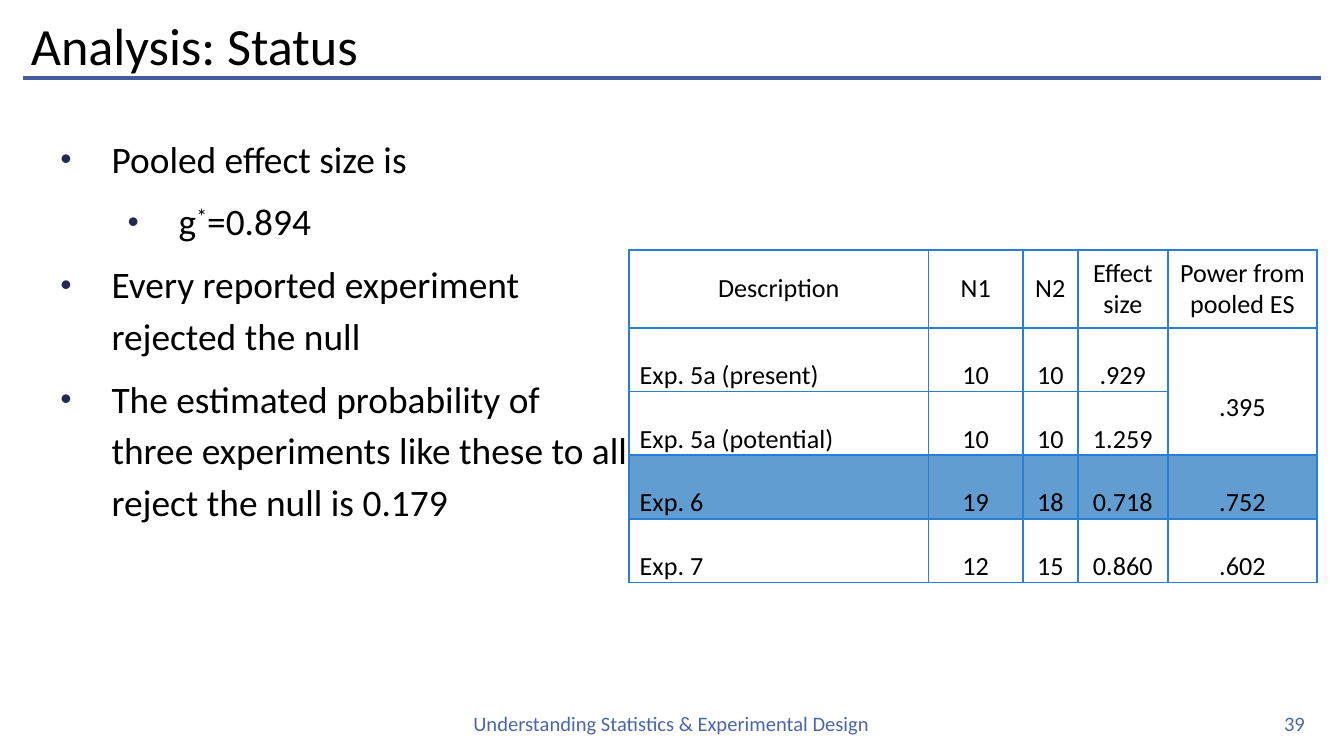
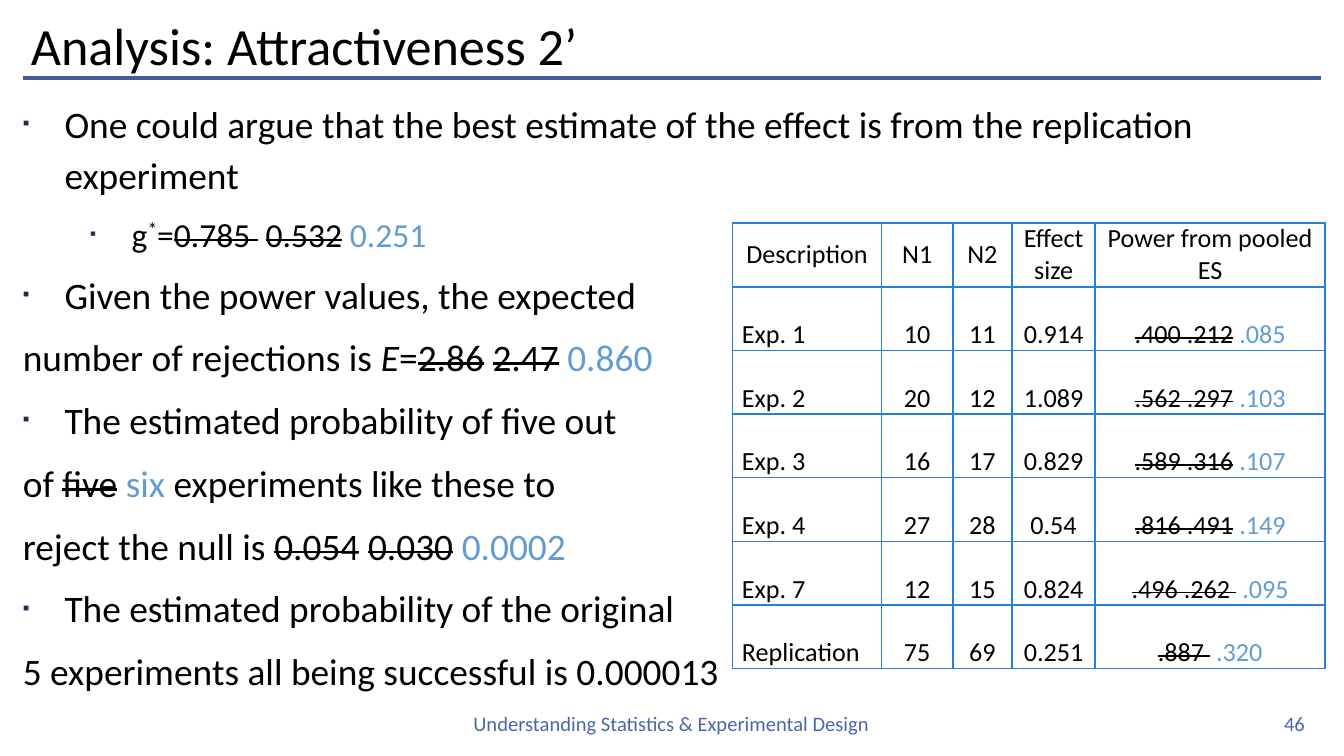
from dataclasses import dataclass
from typing import NamedTuple, Optional, Sequence, Union

from lxml import etree
from pptx import Presentation
from pptx import util as u
from pptx.dml.color import RGBColor
from pptx.enum import shapes, text
from pptx.oxml import ns

LEFT, CENTER, RIGHT = text.PP_ALIGN.LEFT, text.PP_ALIGN.CENTER, text.PP_ALIGN.RIGHT
TOP, MIDDLE, BOTTOM = (text.MSO_ANCHOR.TOP, text.MSO_ANCHOR.MIDDLE,
                       text.MSO_ANCHOR.BOTTOM)
WIDTH = u.Inches(10)
HEIGHT = WIDTH * 9 // 16


@dataclass(frozen=True)
class Theme:
    font: str = "Calibri"
    ink: str = "000000"
    paper: str = "FFFFFF"
    footer: str = "4A66AC"
    rule: str = "435C9B"
    grid: str = "297FD5"
    accent: str = "629DD1"
    bullet: str = "242852"
    title_size: int = 28
    body_size: int = 20
    sub_size: int = 18
    table_size: int = 14
    footer_size: int = 11
    rule_width: float = 2.25
    grid_width: float = 1
    body_spacing: float = 1.15
    row_spacing: float = 2.0
    space_before: float = 0.3


THEME = Theme()


class Box(NamedTuple):
    """A frame in percent of the slide's width and height."""
    left: float
    top: float
    width: float
    height: float

    def emu(self) -> tuple[int, int, int, int]:
        return (across(self.left), down(self.top),
                across(self.width), down(self.height))


class Run(NamedTuple):
    text: str
    color: str = THEME.ink
    strike: bool = False
    italic: bool = False
    raised: bool = False


Content = Union[str, Sequence[Union[str, Run]]]


class Item(NamedTuple):
    content: Content
    level: int = 0
    bulleted: bool = True
    size: int = THEME.body_size


@dataclass(frozen=True)
class BulletList:
    box: Box
    mark: str
    indent: float
    items: Sequence[Item]


@dataclass(frozen=True)
class Grid:
    """Table; None in a row continues the cell above it."""
    box: Box
    columns: Sequence[float]
    header_height: float
    row_height: float
    margin: float
    rows: Sequence[Sequence[Optional[Content]]]
    shaded_row: Optional[int] = None


@dataclass(frozen=True)
class Page:
    title: str
    number: int
    bullets: BulletList
    grid: Grid


TITLE_BOX = Box(1.3, 0.53, 90.5, 10.49)
FOOTER_BOX = Box(24.4, 92.98, 51.1, 5.33)
NUMBER_BOX = Box(87.5, 92.98, 10.3, 5.33)
RULE_LEFT, RULE_RIGHT, RULE_TOP = 1.7, 98.3, 10.31
FOOTER_MARGINS = (0.7, 0.7)
BODY_MARGINS = (1, 0.9)
LEVEL_STEP = 5
FOOTER = "Understanding Statistics & Experimental Design"
HEADER = ("Description", "N1", "N2", "Effect size", "Power from pooled ES")


def across(percent: float) -> int:
    return round(WIDTH * percent / 100)


def down(percent: float) -> int:
    return round(HEIGHT * percent / 100)


def rgb(color: str) -> RGBColor:
    return RGBColor.from_string(color)


def struck(words: str) -> Run:
    return Run(words, strike=True)


def fresh(words: str) -> Run:
    return Run(words, color=THEME.accent)


def revised(old: str, new: str) -> list[Union[str, Run]]:
    return [struck(old), " ", fresh(new)]


def write(p, content: Content, *, size: float, color: str = THEME.ink,
          align=LEFT, spacing: float = 1.0, before: float = 0) -> None:
    """Fill a paragraph; plain strings take the paragraph's colour."""
    p.alignment, p.line_spacing, p.space_before = align, spacing, u.Pt(before)
    for part in [content] if isinstance(content, str) else content:
        run = Run(part, color) if isinstance(part, str) else part
        r = p.add_run()
        r.text = run.text
        font = r.font
        font.name, font.size = THEME.font, u.Pt(size)
        font.color.rgb = rgb(run.color)
        if run.italic:
            font.italic = True
        if run.strike:
            r._r.get_or_add_rPr().set("strike", "sngStrike")
        if run.raised:
            r._r.get_or_add_rPr().set("baseline", "30000")


def frame(sp, margins: tuple[float, float], anchor):
    tf = sp.text_frame
    tf.word_wrap, tf.auto_size = True, text.MSO_AUTO_SIZE.NONE
    tf.vertical_anchor = anchor
    tf.margin_left = tf.margin_right = across(margins[0])
    tf.margin_top = tf.margin_bottom = down(margins[1])
    return tf


def place(sp, box: Box) -> None:
    sp.left, sp.top, sp.width, sp.height = box.emu()


def sub(parent, tag: str, **attributes: str):
    return etree.SubElement(parent, ns.qn(tag), attributes)


def set_bullet(p, item: Item, mark: str, indent: float) -> None:
    p.level = item.level
    pPr = p._p.get_or_add_pPr()
    hang = across(indent) if item.bulleted else 0
    pPr.set("marL", str(hang + across(LEVEL_STEP * item.level)))
    pPr.set("indent", str(-hang))
    if not item.bulleted:
        sub(pPr, "a:buNone")
        return
    sub(sub(pPr, "a:buClr"), "a:srgbClr", val=THEME.bullet)
    sub(pPr, "a:buSzPct", val="50000")
    sub(pPr, "a:buFont", typeface=THEME.font)
    sub(pPr, "a:buChar", char=mark)


def add_bullets(sp, bullets: BulletList) -> None:
    place(sp, bullets.box)
    tf = frame(sp, BODY_MARGINS, TOP)
    for i, item in enumerate(bullets.items):
        p = tf.add_paragraph() if i else tf.paragraphs[0]
        set_bullet(p, item, bullets.mark, bullets.indent)
        write(p, item.content, size=item.size, spacing=THEME.body_spacing,
              before=THEME.space_before * item.size if i else 0)


def set_borders(cell) -> None:
    tcPr = cell._tc.get_or_add_tcPr()
    for i, side in enumerate(("lnL", "lnR", "lnT", "lnB")):
        ln = sub(tcPr, f"a:{side}", w=str(u.Pt(THEME.grid_width)))
        sub(sub(ln, "a:solidFill"), "a:srgbClr", val=THEME.grid)
        tcPr.insert(i, ln)


def add_grid(slide, grid: Grid) -> None:
    rows = [HEADER, *grid.rows]
    sp = slide.shapes.add_table(len(rows), len(HEADER), *grid.box.emu())
    table = sp.table
    table.first_row = table.horz_banding = False
    for column, width in zip(table.columns, grid.columns):
        column.width = across(width)
    for i, row in enumerate(rows):
        table.rows[i].height = down(grid.row_height if i else grid.header_height)
        for j, content in enumerate(row):
            cell = table.cell(i, j)
            if i == grid.shaded_row:
                cell.fill.solid()
                cell.fill.fore_color.rgb = rgb(THEME.accent)
            else:
                cell.fill.background()
            set_borders(cell)
            cell.margin_left = cell.margin_right = across(grid.margin)
            cell.margin_top = cell.margin_bottom = 0
            if content is None:
                above = table.cell(i - 1, j)
                above.merge(cell)
                above.vertical_anchor = MIDDLE
                continue
            cell.vertical_anchor = MIDDLE if i == 0 else BOTTOM if j else TOP
            write(cell.text_frame.paragraphs[0], content, size=THEME.table_size,
                  align=CENTER if i == 0 or j else LEFT,
                  spacing=THEME.row_spacing if i else 1.0)
    sp.height = down(grid.box.height)


def add_furniture(slide, number: int) -> None:
    """Draw the page number, the footer and the rule under the title."""
    badge = slide.shapes.add_shape(shapes.MSO_SHAPE.RECTANGLE, *NUMBER_BOX.emu())
    badge.shadow.inherit = False
    badge.fill.solid()
    badge.fill.fore_color.rgb = rgb(THEME.paper)
    badge.line.fill.background()
    footer = slide.shapes.add_textbox(*FOOTER_BOX.emu())
    for sp, words, align in ((badge, str(number), RIGHT), (footer, FOOTER, CENTER)):
        write(frame(sp, FOOTER_MARGINS, MIDDLE).paragraphs[0], words,
              size=THEME.footer_size, color=THEME.footer, align=align)
    rule = slide.shapes.add_connector(
        shapes.MSO_CONNECTOR.STRAIGHT, across(RULE_LEFT), down(RULE_TOP),
        across(RULE_RIGHT), down(RULE_TOP))
    rule.line.color.rgb = rgb(THEME.rule)
    rule.line.width = u.Pt(THEME.rule_width)
    sub(rule._element.spPr, "a:effectLst")


def add_page(prs, page: Page) -> None:
    slide = prs.slides.add_slide(prs.slide_layouts[1])
    title, body = slide.placeholders
    place(title, TITLE_BOX)
    write(frame(title, BODY_MARGINS, BOTTOM).paragraphs[0], page.title,
          size=THEME.title_size)
    add_bullets(body, page.bullets)
    add_furniture(slide, page.number)
    add_grid(slide, page.grid)


STAR = Run("*", raised=True)
STATUS = Page(
    "Analysis: Status", 39,
    BulletList(Box(3.5, 16.18, 44.2, 61.51), "●", 3.8, [
        Item("Pooled effect size is"),
        Item(["g", STAR, "=0.894"], level=1),
        Item("Every reported experiment rejected the null"),
        Item("The estimated probability of three experiments like these to all "
             "reject the null is 0.179")]),
    Grid(Box(46.8, 33.07, 51.1, 43.56), (22.3, 7, 4.1, 6.7, 11.1), 10.31, 8.36, 0.8, [
        ("Exp. 5a (present)", "10", "10", ".929", ".395"),
        ("Exp. 5a (potential)", "10", "10", "1.259", None),
        ("Exp. 6", "19", "18", "0.718", ".752"),
        ("Exp. 7", "12", "15", "0.860", ".602")], shaded_row=3))
ATTRACTIVENESS = Page(
    "Analysis: Attractiveness 2’", 46,
    BulletList(Box(0.7, 11.56, 89.4, 80.89), "▪", 3.1, [
        Item("One could argue that the best estimate of the effect is from the "
             "replication experiment"),
        Item(["g", STAR, "=", struck("0.785 "), " ", *revised("0.532", "0.251")],
             level=1, size=THEME.sub_size),
        Item("Given the power values, the expected"),
        Item(["number of rejections is ", Run("E", italic=True), "=",
              struck("2.86"), " ", *revised("2.47", "0.860")], bulleted=False),
        Item("The estimated probability of five out"),
        Item(["of ", *revised("five", "six"), " experiments like these to"],
             bulleted=False),
        Item(["reject the null is ", struck("0.054"), " ",
              *revised("0.030", "0.0002")], bulleted=False),
        Item("The estimated probability of the original"),
        Item("5 experiments all being successful is 0.000013", bulleted=False)]),
    Grid(Box(54.5, 29.51, 44, 58.13), (11.1, 5.3, 4.4, 6.2, 17.1), 7.29, 7.29, 0.7, [
        ("Exp. 1", "10", "11", "0.914", revised(".400 .212", ".085")),
        ("Exp. 2", "20", "12", "1.089", revised(".562 .297", ".103")),
        ("Exp. 3", "16", "17", "0.829", revised(".589 .316", ".107")),
        ("Exp. 4", "27", "28", "0.54", revised(".816 .491", ".149")),
        ("Exp. 7", "12", "15", "0.824", revised(".496 .262 ", ".095")),
        ("Replication", "75", "69", "0.251", revised(".887 ", ".320"))]))


def main() -> None:
    prs = Presentation()
    prs.slide_width, prs.slide_height = WIDTH, HEIGHT
    for page in (STATUS, ATTRACTIVENESS):
        add_page(prs, page)
    prs.save("out.pptx")


if __name__ == "__main__":
    main()
